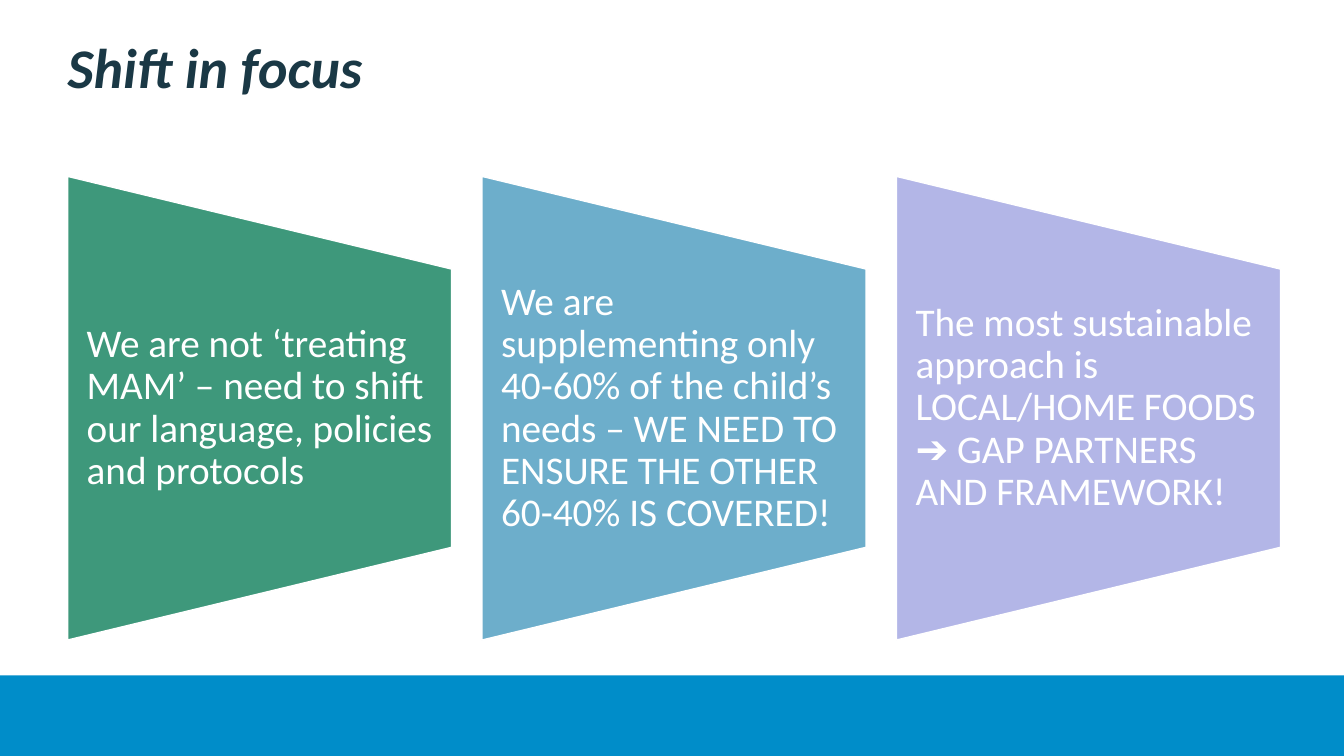
from pptx import Presentation
from pptx.dml.color import RGBColor
from pptx.enum.shapes import MSO_SHAPE
from pptx.enum.text import MSO_ANCHOR, PP_ALIGN
from pptx.util import Inches, Pt

RECTANGLE = MSO_SHAPE.RECTANGLE
TOP, MIDDLE = MSO_ANCHOR.TOP, MSO_ANCHOR.MIDDLE
LEFT = PP_ALIGN.LEFT

WHITE = RGBColor(0xFF, 0xFF, 0xFF)
NAVY = RGBColor(0x1A, 0x38, 0x45)
BLUE = RGBColor(0x00, 0x8D, 0xC9)
GREEN = RGBColor(0x3E, 0x98, 0x7B)
SKY = RGBColor(0x6D, 0xAE, 0xCB)
LILAC = RGBColor(0xB3, 0xB6, 0xE7)

SLIDE_WIDTH, SLIDE_HEIGHT = 13.33, 7.5
MARGIN = 0.67
PANEL_TOP, PANEL_WIDTH, PANEL_HEIGHT = 1.75, 3.81, 4.6
PANEL_PITCH = 4.11
PANEL_SLOPE = 0.92

PANELS = [
    (GREEN, "We are not ‘treating MAM’ – need to shift our language, "
            "policies and protocols"),
    (SKY, "We are supplementing only 40-60% of the child’s needs – "
          "WE NEED TO ENSURE THE OTHER 60-40% IS COVERED!"),
    (LILAC, "The most sustainable approach is LOCAL/HOME FOODS "
            "➔ GAP PARTNERS AND FRAMEWORK!"),
]


class SlideBuilder:
    font_name = "Calibri"
    line_spacing = 0.9

    def __init__(self, slide):
        self.slide = slide

    def set_text(self, shape, text, size, color, anchor, inset_x=0, inset_y=0):
        frame = shape.text_frame
        frame.word_wrap = True
        frame.vertical_anchor = anchor
        frame.margin_left = frame.margin_right = Inches(inset_x)
        frame.margin_top = frame.margin_bottom = Inches(inset_y)
        frame.text = text
        paragraph = frame.paragraphs[0]
        paragraph.alignment = LEFT
        paragraph.line_spacing = self.line_spacing
        paragraph.space_before = Pt(0)
        font = paragraph.font
        font.name, font.size = self.font_name, Pt(size)
        font.color.rgb = color
        return font

    def title(self, text):
        shape = self.slide.shapes.title
        shape.left, shape.top = Inches(MARGIN), Inches(0.4)
        shape.width, shape.height = Inches(12.03), Inches(0.8)
        font = self.set_text(shape, text, 40, NAVY, TOP)
        font.bold = font.italic = True

    def band(self, top, color):
        shape = self.slide.shapes.add_shape(
            RECTANGLE, 0, Inches(top),
            Inches(SLIDE_WIDTH), Inches(SLIDE_HEIGHT - top))
        shape.shadow.inherit = False
        shape.fill.solid()
        shape.fill.fore_color.rgb = color
        shape.line.fill.background()

    def panel(self, left, color, text):
        right, bottom = left + PANEL_WIDTH, PANEL_TOP + PANEL_HEIGHT
        corners = [(left, bottom), (left, PANEL_TOP),
                   (right, PANEL_TOP + PANEL_SLOPE),
                   (right, bottom - PANEL_SLOPE)]
        start, *others = [(Inches(x), Inches(y)) for x, y in corners]
        builder = self.slide.shapes.build_freeform(*start)
        builder.add_line_segments(others, close=True)
        shape = builder.convert_to_shape()
        shape.shadow.inherit = False
        shape.fill.solid()
        shape.fill.fore_color.rgb = color
        shape.line.color.rgb = WHITE
        shape.line.width = Pt(1)
        self.set_text(shape, text, 28, WHITE, MIDDLE, 0.19, PANEL_SLOPE)


def main():
    presentation = Presentation()
    presentation.slide_width = Inches(SLIDE_WIDTH)
    presentation.slide_height = Inches(SLIDE_HEIGHT)
    title_only = presentation.slide_layouts[5]
    builder = SlideBuilder(presentation.slides.add_slide(title_only))

    # Footer band and title
    builder.band(6.7, BLUE)
    builder.title("Shift in focus")

    # Three tapering panels
    for index, (color, text) in enumerate(PANELS):
        builder.panel(MARGIN + index * PANEL_PITCH, color, text)

    presentation.save("out.pptx")


if __name__ == "__main__":
    main()
